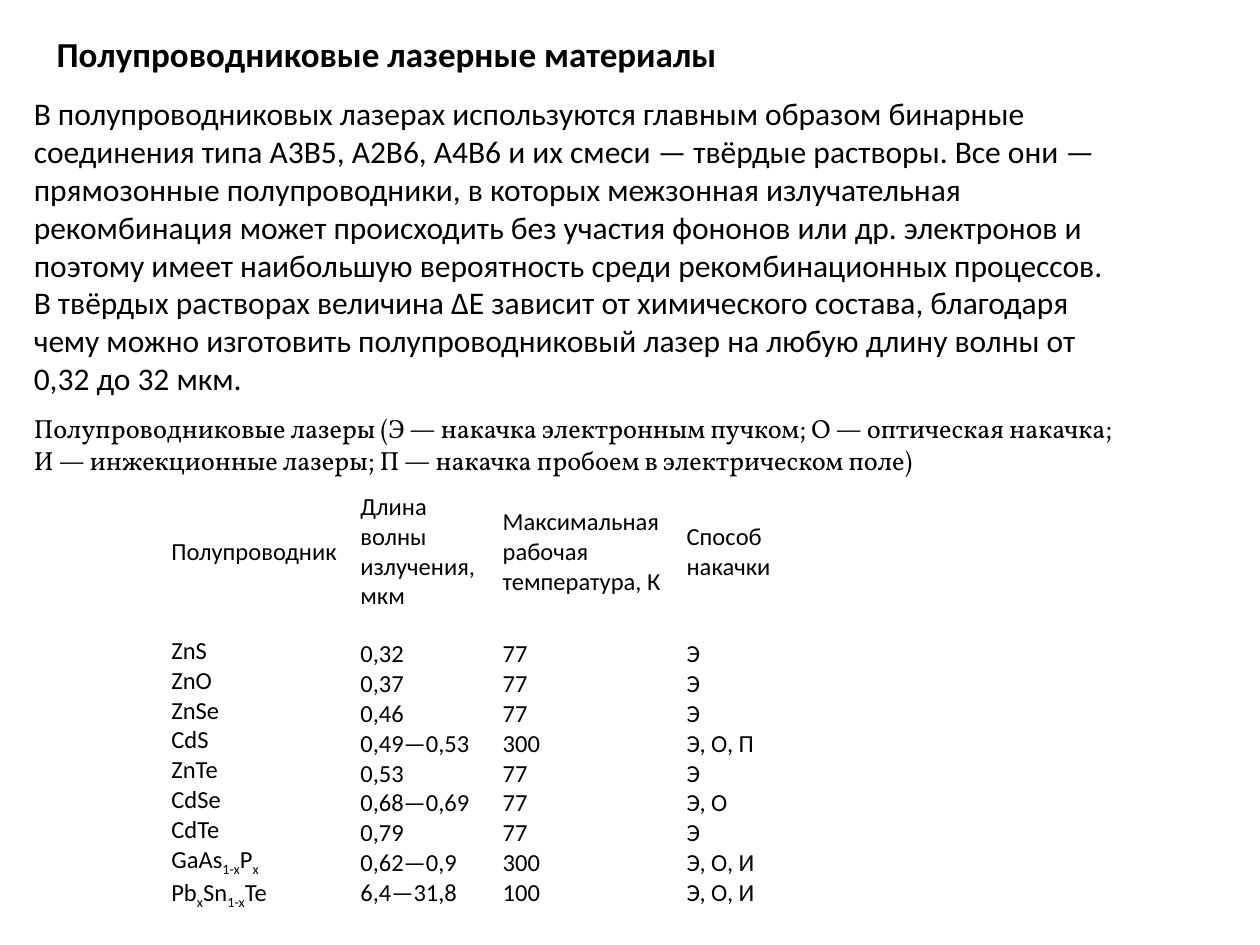
from pptx import Presentation
from pptx.dml.color import RGBColor
from pptx.enum.text import MSO_ANCHOR, MSO_AUTO_SIZE
from pptx.util import Inches, Pt

deck = Presentation()
deck.slide_width = Inches(10)
deck.slide_height = Inches(7.5)
page = deck.slides.add_slide(deck.slide_layouts[6])
unit = deck.slide_width / 100


def color(value):
    return RGBColor.from_string(value)


def write(frame, text, size=14, font="Calibri", bold=False, ink="000000"):
    for number, line in enumerate(text.split("\n")):
        para = frame.add_paragraph() if number else frame.paragraphs[0]
        for part, words in enumerate(line.split("_")):
            if not words:
                continue
            span = para.add_run()
            span.text = words
            span.font.size = Pt(size)
            span.font.name = font
            span.font.bold = bold
            span.font.color.rgb = color(ink)
            if part % 2:
                span.font._element.set("baseline", "-25000")


body = (
    "В полупроводниковых лазерах используются главным образом бинарные "
    "соединения типа А3В5, А2В6, А4В6 и их смеси — твёрдые растворы. "
    "Все они — прямозонные полупроводники, в которых межзонная излучательная "
    "рекомбинация может происходить без участия фононов или др. электронов "
    "и поэтому имеет наибольшую вероятность среди рекомбинационных процессов. "
    "В твёрдых растворах величина ΔE зависит от химического состава, благодаря "
    "чему можно изготовить полупроводниковый лазер на любую длину волны "
    "от 0,32 до 32 мкм."
)
title = "Полупроводниковые лазерные материалы"
caption = (
    "Полупроводниковые лазеры (Э — накачка электронным пучком; О — оптическая накачка;\n"
    "И — инжекционные лазеры; П — накачка пробоем в электрическом поле)"
)

texts = [
    (body, (1.7, 7, 88.3, 28.3), True, MSO_ANCHOR.TOP, {"size": 18}),
    (title, (3.5, 2.1, 62.1, 4.3), False, MSO_ANCHOR.TOP, {"size": 20, "bold": True}),
    (caption, (1.7, 32.2, 91.2, 6.1), False, MSO_ANCHOR.MIDDLE, {"size": 15, "font": "Vollkorn"}),
]
for text, place, wrap, anchor, style in texts:
    box = page.shapes.add_textbox(*[round(share * unit) for share in place])
    frame = box.text_frame
    frame.word_wrap = wrap
    frame.auto_size = MSO_AUTO_SIZE.SHAPE_TO_FIT_TEXT
    frame.vertical_anchor = anchor
    write(frame, text, **style)

headings = [
    "Полупроводник",
    "Длина волны излучения, мкм",
    "Максимальная рабочая температура, К",
    "Способ накачки",
]
lasers = [
    ("ZnS", "0,32", "77", "Э"),
    ("ZnO", "0,37", "77", "Э"),
    ("ZnSe", "0,46", "77", "Э"),
    ("CdS", "0,49—0,53", "300", "Э, О, П"),
    ("ZnTe", "0,53", "77", "Э"),
    ("CdSe", "0,68—0,69", "77", "Э, О"),
    ("CdTe", "0,79", "77", "Э"),
    ("GaAs_1-x_P_x", "0,62—0,9", "300", "Э, О, И"),
    ("Pb_x_Sn_1-x_Te", "6,4—31,8", "100", "Э, О, И"),
]
widths = [15, 11.3, 14.6, 11.7]
heights = [11, 24.2]
place = (13, 38.3, sum(widths), sum(heights))
table = page.shapes.add_table(
    len(heights), len(widths), *[round(share * unit) for share in place]
).table
table.first_row = False
table.horz_banding = False
for column, width in zip(table.columns, widths):
    column.width = round(width * unit)
for row, height in zip(table.rows, heights):
    row.height = round(height * unit)

contents = [headings, ["\n".join(values) for values in zip(*lasers)]]
for row, entries in zip(table.rows, contents):
    for cell, text in zip(row.cells, entries):
        cell.fill.background()
        cell.vertical_anchor = MSO_ANCHOR.MIDDLE
        cell.margin_left = cell.margin_right = round(0.6 * unit)
        cell.margin_top = cell.margin_bottom = round(0.3 * unit)
        write(cell.text_frame, text)

deck.save("out.pptx")
